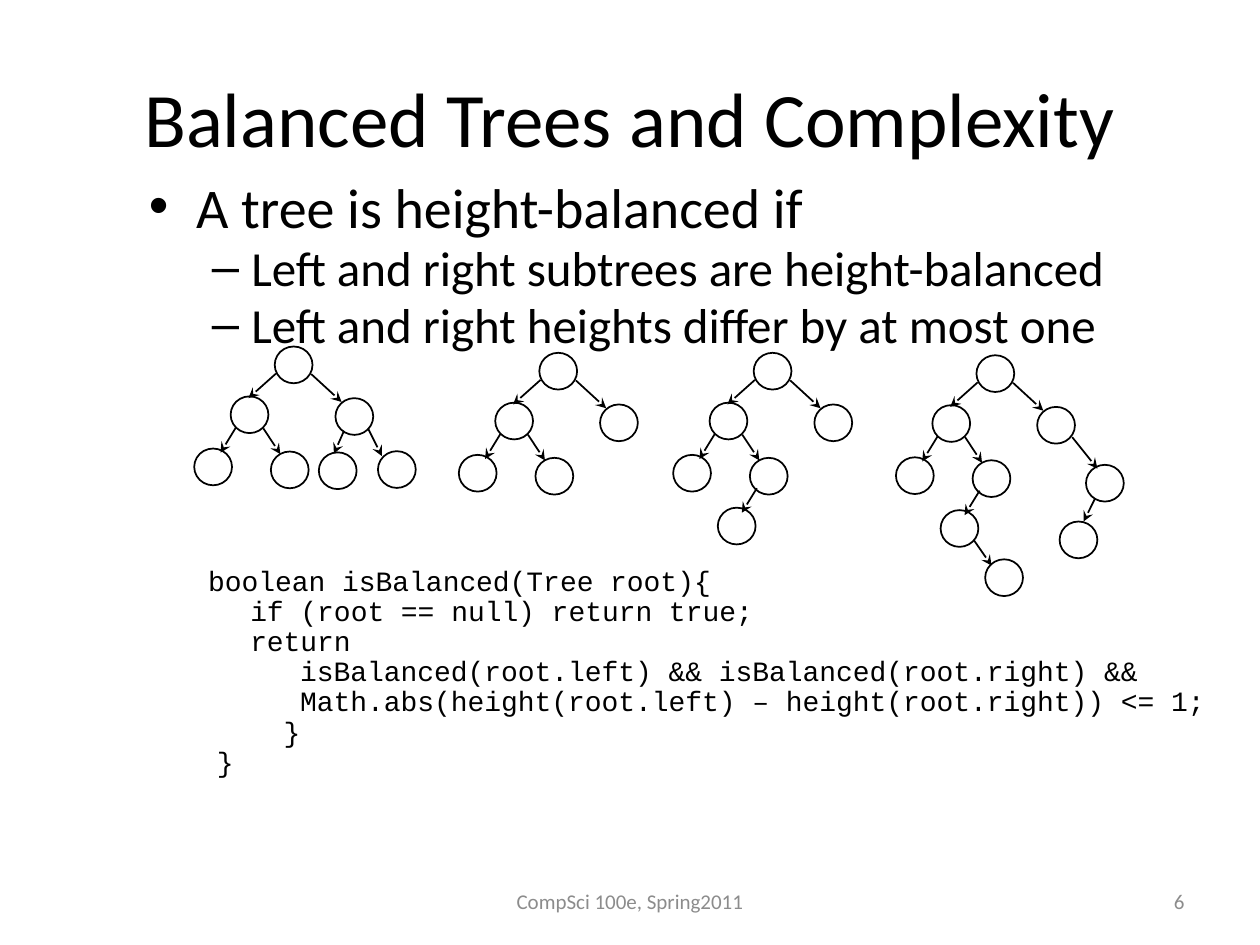
from collections import namedtuple
from dataclasses import dataclass

from lxml.etree import SubElement
from pptx import Presentation
from pptx.dml.color import RGBColor
from pptx.enum.shapes import MSO_CONNECTOR, MSO_SHAPE
from pptx.enum.text import MSO_ANCHOR, PP_ALIGN
from pptx.oxml.ns import qn
from pptx.util import Pt


@dataclass(frozen=True)
class Theme:
    """Colours, fonts and type sizes of the slide."""
    ink: RGBColor = RGBColor(0, 0, 0)
    muted: RGBColor = RGBColor(0x8C, 0x8C, 0x8C)
    sans: str = "Calibri"
    mono: str = "Courier New"
    title: int = 44
    point: int = 32
    subpoint: int = 28
    code: int = 16
    footer: int = 12


THEME = Theme()
Box = namedtuple("Box", "left top width height")
Branch = namedtuple("Branch", "child start end")

NODE_WIDTH, NODE_HEIGHT = 21.6, 21

BRANCHES = {
    "L": Branch((-25.2, 28.5), (0.7, 15.5), (-15, 29.5)),
    "R": Branch((34.7, 29.5), (20.9, 15.8), (38.2, 31.7)),
    "LL": Branch((-46, 58.3), (-22.3, 46.5), (-31, 60.7)),
    "LR": Branch((-2.2, 60), (-6.5, 46.8), (3.2, 61.5)),
    "RL": Branch((25.2, 60.5), (39.6, 48.2), (33.8, 61.2)),
    "RR": Branch((59, 59.8), (53.3, 46.8), (61.2, 62.6)),
    "RR wide": Branch((62.6, 62.6), (54.7, 46.8), (69.1, 64.8)),
    "RRL": Branch((47.5, 95), (67.7, 82), (61.2, 95)),
    "LRL": Branch((-20.5, 88.5), (1.8, 77.4), (-6.8, 91.4)),
    "LRLR": Branch((5, 116.6), (-1.4, 105.8), (8.6, 120.2)),
}

SMALL_TREE = ["L", "R", "LL", "LR"]
TREES = [
    ((157, 198), SMALL_TREE + ["RL", "RR"]),
    ((308.2, 201.6), SMALL_TREE),
    ((430.7, 201.6), SMALL_TREE + ["LRL"]),
    ((558, 203), SMALL_TREE + ["RR wide", "RRL", "LRL", "LRLR"]),
]

POINTS = [
    (0, "A tree is height-balanced if"),
    (1, "Left and right subtrees are height-balanced"),
    (1, "Left and right heights differ by at most one"),
]

CODE = [
    (0, "boolean isBalanced(Tree root){"),
    (24, "if (root == null) return true;"),
    (24, "return"),
    (52.5, "isBalanced(root.left) && isBalanced(root.right) &&"),
    (52.5, "Math.abs(height(root.left) – height(root.right)) <= 1;"),
    (43, "}"),
    (5, "}"),
]


def set_font(paragraph, name, size, color):
    """Set the typeface, size and colour of a paragraph."""
    paragraph.font.name = name
    paragraph.font.size = Pt(size)
    paragraph.font.color.rgb = color


def set_indent(paragraph, margin, hanging=0):
    """Set the left margin and hanging indent of a paragraph."""
    properties = paragraph._p.get_or_add_pPr()
    properties.set("marL", str(Pt(margin)))
    properties.set("indent", str(-Pt(hanging)))
    return properties


def add_text_frame(slide, box):
    """Add a wrapping text box and return its text frame."""
    frame = slide.shapes.add_textbox(*map(Pt, box)).text_frame
    frame.word_wrap = True
    return frame


def add_paragraphs(frame, lines):
    """Yield a paragraph and its level or indent for each line."""
    for index, (depth, line) in enumerate(lines):
        paragraph = frame.add_paragraph() if index else frame.paragraphs[0]
        paragraph.text = line
        yield paragraph, depth


def add_title(slide, box, wording):
    """Place and format the title placeholder."""
    title = slide.shapes.title
    title.left, title.top, title.width, title.height = map(Pt, box)
    title.text_frame.text = wording
    title.text_frame.vertical_anchor = MSO_ANCHOR.MIDDLE
    heading = title.text_frame.paragraphs[0]
    heading.alignment = PP_ALIGN.CENTER
    set_font(heading, THEME.sans, THEME.title, THEME.ink)


def add_points(slide, box):
    """Add the two-level bulleted definition."""
    styles = [("•", 27, 27, THEME.point), ("–", 58.5, 22.5, THEME.subpoint)]
    for paragraph, level in add_paragraphs(add_text_frame(slide, box), POINTS):
        bullet, margin, hanging, size = styles[level]
        paragraph.level = level
        paragraph.line_spacing = 0.8
        paragraph.space_before = Pt(size * 0.2 * level)
        properties = set_indent(paragraph, margin, hanging)
        SubElement(properties, qn("a:buFont"), typeface="Arial")
        SubElement(properties, qn("a:buChar"), char=bullet)
        set_font(paragraph, THEME.sans, size, THEME.ink)


def add_code(slide, box):
    """Add the listing with indented lines."""
    frame = add_text_frame(slide, box)
    frame.margin_left = frame.margin_right = frame.margin_top = 0
    for paragraph, indent in add_paragraphs(frame, CODE):
        set_indent(paragraph, indent)
        paragraph.line_spacing = 0.9
        set_font(paragraph, THEME.mono, THEME.code, THEME.ink)


def add_node(tree, left, top):
    """Add an empty node circle to a tree."""
    node = tree.shapes.add_shape(
        MSO_SHAPE.OVAL, Pt(left), Pt(top), Pt(NODE_WIDTH), Pt(NODE_HEIGHT))
    node.shadow.inherit = False
    node.fill.background()
    node.line.color.rgb = THEME.ink
    node.line.width = Pt(1)


def add_edge(tree, start, end):
    """Add an arrow from a parent to its child."""
    edge = tree.shapes.add_connector(
        MSO_CONNECTOR.STRAIGHT, *map(Pt, (*start, *end)))
    edge.line.color.rgb = THEME.ink
    edge.line.width = Pt(1)
    SubElement(edge.get_or_add_ln(), qn("a:tailEnd"), type="stealth")
    SubElement(edge._element.spPr, qn("a:effectLst"))


def add_tree(slide, root, branches):
    """Add a grouped tree placed relative to its root's corner."""
    tree = slide.shapes.add_group_shape()
    left, top = root
    add_node(tree, left, top)
    for branch in branches:
        child, start, end = (
            (left + x, top + y) for x, y in BRANCHES[branch])
        add_edge(tree, start, end)
        add_node(tree, *child)


def add_footer(slide, box, wording, alignment):
    """Add one muted footer text."""
    frame = add_text_frame(slide, box)
    frame.vertical_anchor = MSO_ANCHOR.MIDDLE
    note = frame.paragraphs[0]
    note.text = wording
    note.alignment = alignment
    set_font(note, THEME.sans, THEME.footer, THEME.muted)


def main():
    """Build and save the slide."""
    deck = Presentation()
    deck.slide_width, deck.slide_height = Pt(720), Pt(540)
    slide = deck.slides.add_slide(deck.slide_layouts[5])
    add_title(slide, Box(36, 21.6, 648, 90), "Balanced Trees and Complexity")
    add_points(slide, Box(78, 102.25, 624, 104))
    add_code(slide, Box(119, 324, 583, 120))
    for root, branches in TREES:
        add_tree(slide, root, branches)
    add_footer(slide, Box(516, 500.5, 168, 28.75), "6", PP_ALIGN.RIGHT)
    add_footer(slide, Box(246, 500.5, 228, 28.75),
               "CompSci 100e, Spring2011", PP_ALIGN.CENTER)
    deck.save("out.pptx")


if __name__ == "__main__":
    main()
